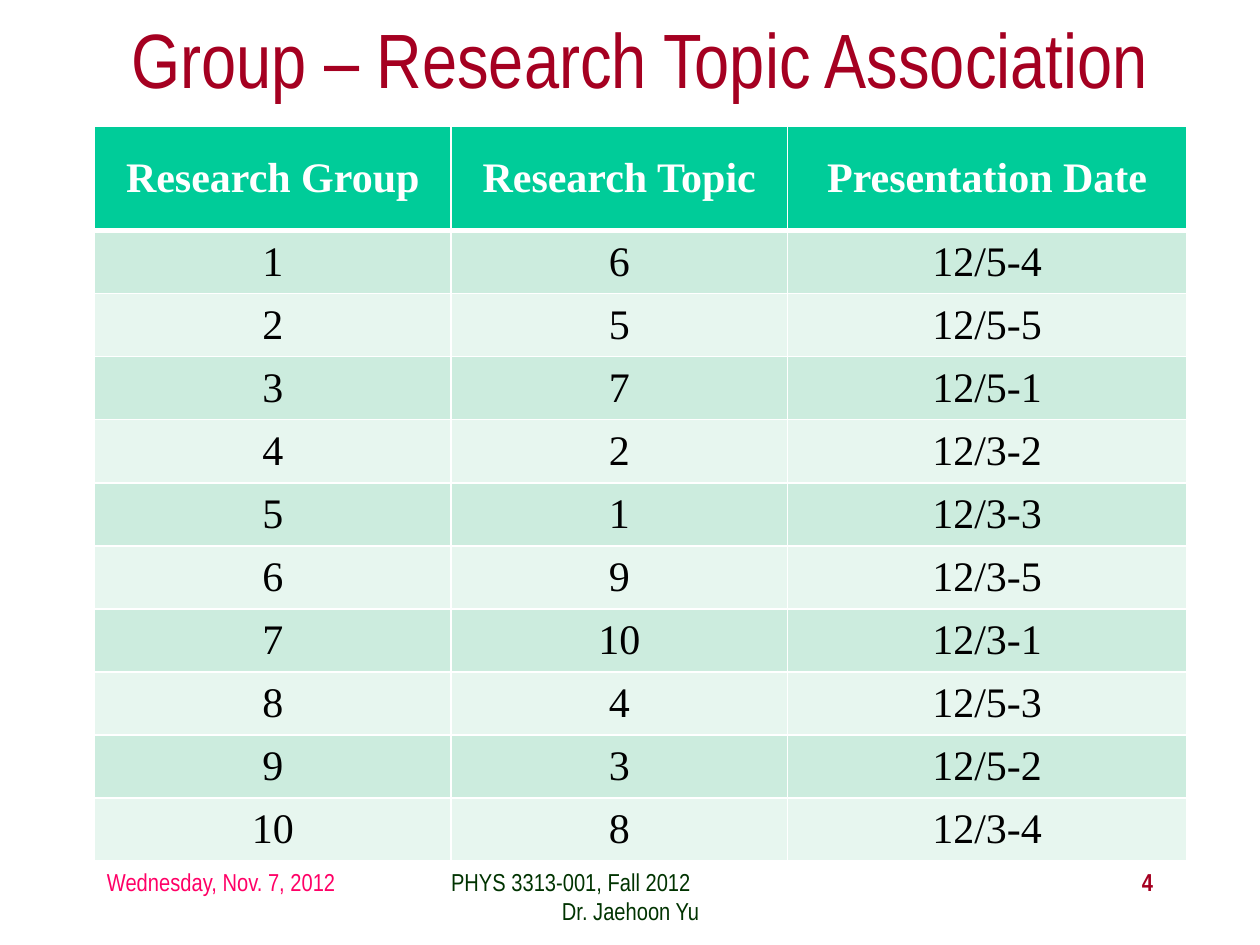
"""Build the slide that matches research groups with topics and dates."""
from dataclasses import dataclass

import pptx
import pptx.dml.color
import pptx.enum.text
import pptx.oxml
import pptx.oxml.ns
import pptx.util
from pptx.util import Inches

ALIGN = pptx.enum.text.PP_ALIGN
MIDDLE = pptx.enum.text.MSO_ANCHOR.MIDDLE


@dataclass(frozen=True)
class Theme:
    """Colours, fonts and type sizes of the slide."""
    heading_font: str = "Arial Narrow"
    table_font: str = "Times New Roman"
    title_size: int = 44
    table_size: int = 24
    footer_size: int = 14
    crimson: str = "A50021"
    pink: str = "FF0066"
    dark_green: str = "003300"
    white: str = "FFFFFF"
    black: str = "000000"
    header_fill: str = "00CC99"
    band_fills: tuple = ("CCECDE", "E7F6EF")


THEME = Theme()
HEADERS = ("Research Group", "Research Topic", "Presentation Date")
TOPICS_AND_DATES = (
    (6, "12/5-4"), (5, "12/5-5"), (7, "12/5-1"), (2, "12/3-2"), (1, "12/3-3"),
    (9, "12/3-5"), (10, "12/3-1"), (4, "12/5-3"), (3, "12/5-2"), (8, "12/3-4"),
)
COLUMN_WIDTHS = (2.83, 2.67, 3.17)
HEADER_HEIGHT, ROW_HEIGHT = 0.83, 0.46
FOOTER_TOP, FOOTER_HEIGHT = 6.83, 0.5


def rgb(value):
    """Return a colour from its hex digits."""
    return pptx.dml.color.RGBColor.from_string(value)


def style_paragraph(paragraph, font, size, color, align, bold=False):
    """Set the alignment and font of a paragraph."""
    paragraph.alignment = align
    paragraph.font.name = font
    paragraph.font.size = pptx.util.Pt(size)
    paragraph.font.bold = bold
    paragraph.font.color.rgb = rgb(color)


def add_title(slide, text):
    """Fill and place the title placeholder."""
    title = slide.shapes.title
    title.left, title.top = Inches(0.83), Inches(0.17)
    title.width, title.height = Inches(8.5), Inches(0.58)
    frame = title.text_frame
    frame.text = text
    frame.word_wrap = True
    frame.auto_size = pptx.enum.text.MSO_AUTO_SIZE.NONE
    frame.vertical_anchor = MIDDLE
    style_paragraph(frame.paragraphs[0], THEME.heading_font, THEME.title_size,
                    THEME.crimson, ALIGN.CENTER)


def add_footer(slide, left, width, lines, color, bold=False):
    """Add a footer box from (text, alignment) lines and return its frame."""
    box = slide.shapes.add_textbox(Inches(left), Inches(FOOTER_TOP),
                                   Inches(width), Inches(FOOTER_HEIGHT))
    frame = box.text_frame
    frame.word_wrap = True
    for index, (text, align) in enumerate(lines):
        paragraph = frame.add_paragraph() if index else frame.paragraphs[0]
        paragraph.text = text
        style_paragraph(paragraph, THEME.heading_font, THEME.footer_size,
                        color, align, bold)
    return frame


def set_borders(cell, bottom_width):
    """Draw white cell borders, with the given bottom width in points."""
    properties = cell._tc.get_or_add_tcPr()
    widths = {"lnL": 1, "lnR": 1, "lnT": 1, "lnB": bottom_width}
    for position, (side, width) in enumerate(widths.items()):
        properties.insert(position, pptx.oxml.parse_xml(
            f'<a:{side} {pptx.oxml.ns.nsdecls("a")} w="{pptx.util.Pt(width)}">'
            f'<a:solidFill><a:srgbClr val="{THEME.white}"/></a:solidFill></a:{side}>'))


def fill_cell(cell, text, fill, color, is_header):
    """Write and format one table cell."""
    cell.text = str(text)
    cell.vertical_anchor = MIDDLE
    cell.fill.solid()
    cell.fill.fore_color.rgb = rgb(fill)
    style_paragraph(cell.text_frame.paragraphs[0], THEME.table_font,
                    THEME.table_size, color, ALIGN.CENTER, is_header)
    set_borders(cell, 3 if is_header else 1)


def add_topic_table(slide):
    """Add the table of groups, topics and presentation dates."""
    rows = [HEADERS] + [(group, *entry)
                        for group, entry in enumerate(TOPICS_AND_DATES, 1)]
    height = HEADER_HEIGHT + ROW_HEIGHT * len(TOPICS_AND_DATES)
    table = slide.shapes.add_table(
        len(rows), len(HEADERS), Inches(0.75), Inches(1),
        Inches(sum(COLUMN_WIDTHS)), Inches(height)).table
    for column, width in zip(table.columns, COLUMN_WIDTHS):
        column.width = Inches(width)
    for row_index, values in enumerate(rows):
        is_header = row_index == 0
        table.rows[row_index].height = Inches(HEADER_HEIGHT if is_header else ROW_HEIGHT)
        fill = THEME.header_fill if is_header else THEME.band_fills[(row_index - 1) % 2]
        color = THEME.white if is_header else THEME.black
        for column_index, value in enumerate(values):
            fill_cell(table.cell(row_index, column_index), value, fill, color, is_header)


def main():
    """Build and save the presentation."""
    presentation = pptx.Presentation()
    presentation.slide_width, presentation.slide_height = Inches(10), Inches(7.5)
    slide = presentation.slides.add_slide(presentation.slide_layouts[5])
    add_title(slide, "Group – Research Topic Association")
    add_footer(slide, 0.75, 2.08, [("Wednesday, Nov. 7, 2012", ALIGN.LEFT)], THEME.pink)
    course = add_footer(slide, 3.42, 3.17,
                        [("PHYS 3313-001, Fall 2012", ALIGN.LEFT),
                         ("Dr. Jaehoon Yu", ALIGN.CENTER)], THEME.dark_green)
    course.margin_left = course.margin_right = Inches(0.16)
    add_footer(slide, 7.17, 2.08, [("4", ALIGN.RIGHT)], THEME.crimson, bold=True)
    add_topic_table(slide)
    presentation.save("out.pptx")


if __name__ == "__main__":
    main()
